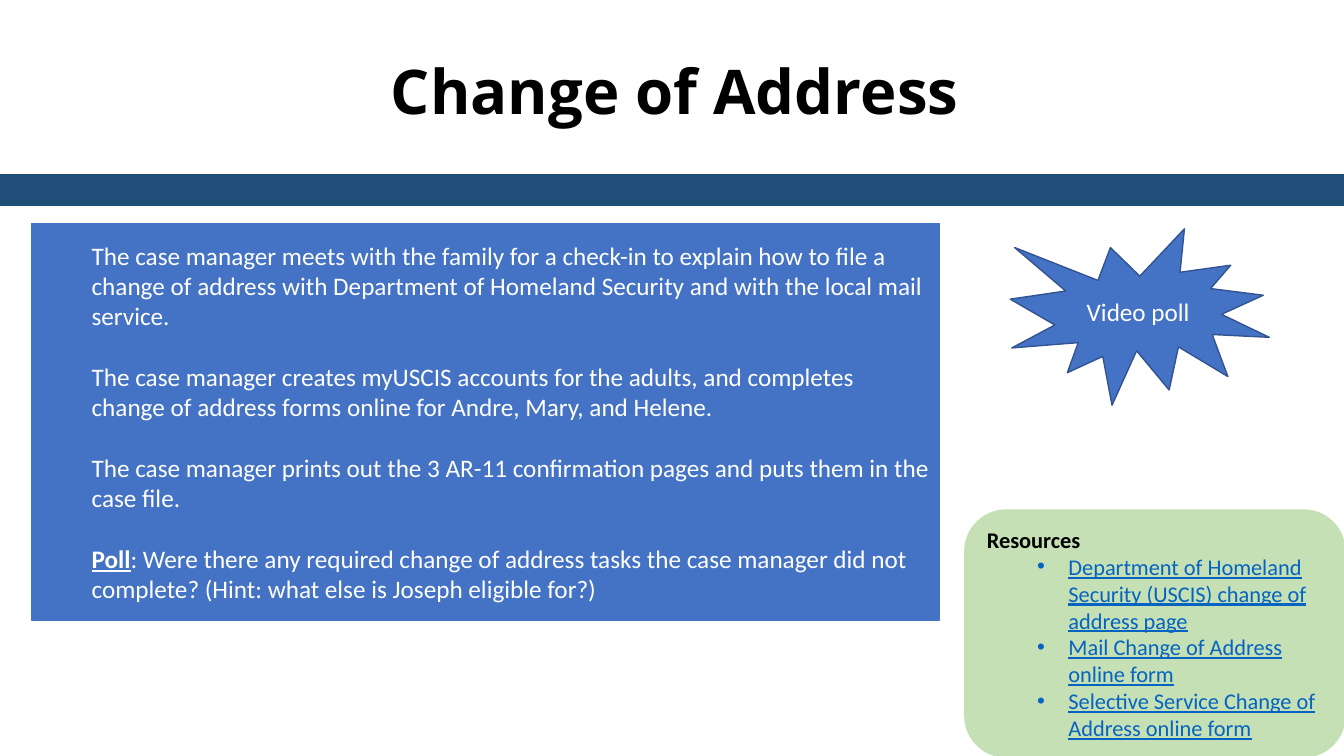
from lxml.etree import SubElement
from pptx import Presentation
from pptx.dml.color import RGBColor
from pptx.enum.shapes import MSO_SHAPE
from pptx.enum.text import MSO_ANCHOR, MSO_AUTO_SIZE, PP_ALIGN
from pptx.oxml.ns import qn
from pptx.util import Inches, Pt

BLACK = RGBColor(0x00, 0x00, 0x00)
WHITE = RGBColor(0xFF, 0xFF, 0xFF)
NAVY = RGBColor(0x1F, 0x4E, 0x79)
BLUE = RGBColor(0x44, 0x72, 0xC4)
OUTLINE_BLUE = RGBColor(0x32, 0x54, 0x91)
GREEN = RGBColor(0xC5, 0xE0, 0xB4)
LINK_BLUE = RGBColor(0x05, 0x63, 0xC1)


def add_panel(slide, preset, bounds, fill, outline):
    shape = slide.shapes.add_shape(preset, *[Inches(length) for length in bounds])
    shape.shadow.inherit = False
    shape.fill.solid()
    shape.fill.fore_color.rgb = fill
    shape.line.color.rgb = outline
    shape.line.width = Pt(1)
    shape.text_frame.word_wrap = True
    shape.text_frame.vertical_anchor = MSO_ANCHOR.MIDDLE
    return shape


def add_run(paragraph, text, color, **formats):
    run = paragraph.add_run()
    run.text = text
    run.font.color.rgb = color
    for name, value in ({"name": "Calibri", "size": Pt(18)} | formats).items():
        setattr(run.font, name, value)


presentation = Presentation()
presentation.slide_width = Inches(13.33)
presentation.slide_height = Inches(7.5)
slide = presentation.slides.add_slide(presentation.slide_layouts[5])

title = slide.shapes.title
title_bounds = {"left": 0.58, "top": 0.47, "width": 12.23, "height": 0.84}
for name, value in title_bounds.items():
    setattr(title, name, Inches(value))
title.text_frame.auto_size = MSO_AUTO_SIZE.NONE
title.text_frame.vertical_anchor = MSO_ANCHOR.MIDDLE
title_paragraph = title.text_frame.paragraphs[0]
title_paragraph.alignment = PP_ALIGN.CENTER
add_run(title_paragraph, "Change of Address", BLACK, name="Open Sans", size=Pt(44), bold=True)

add_panel(slide, MSO_SHAPE.RECTANGLE, (0, 1.73, 13.33, 0.31), NAVY, NAVY)

resources = add_panel(
    slide, MSO_SHAPE.FLOWCHART_ALTERNATE_PROCESS, (9.57, 5.06, 3.77, 2.45), GREEN, GREEN
)
heading = resources.text_frame.paragraphs[0]
heading.alignment = PP_ALIGN.LEFT
add_run(heading, "Resources", BLACK, size=Pt(16), bold=True)
resource_links = [
    "Department of Homeland Security (USCIS) change of address page",
    "Mail Change of Address online form",
    "Selective Service Change of Address online form",
]
for link in resource_links:
    paragraph = resources.text_frame.add_paragraph()
    paragraph.alignment = PP_ALIGN.LEFT
    properties = paragraph._p.get_or_add_pPr()
    properties.set("marL", str(Inches(0.81)))
    properties.set("indent", str(Inches(-0.31)))
    SubElement(properties, qn("a:buFont"), typeface="Arial")
    SubElement(properties, qn("a:buChar"), char="•")
    add_run(paragraph, link, LINK_BLUE, size=Pt(16), underline=True)

scenario = add_panel(slide, MSO_SHAPE.RECTANGLE, (0.31, 2.22, 9.01, 3.93), BLUE, BLUE)
scenario_steps = [
    ("", "The case manager meets with the family for a check-in to explain how to file a "
         "change of address with Department of Homeland Security and with the local "
         "mail service."),
    ("", "The case manager creates myUSCIS accounts for the adults, and completes "
         "change of address forms online for Andre, Mary, and Helene."),
    ("", "The case manager prints out the 3 AR-11 confirmation pages and puts them in the case file."),
    ("Poll", ": Were there any required change of address tasks the case manager did not "
             "complete? (Hint: what else is Joseph eligible for?)"),
]
for index, (label, text) in enumerate(scenario_steps):
    frame = scenario.text_frame
    paragraph = frame.add_paragraph() if index else frame.paragraphs[0]
    paragraph.alignment = PP_ALIGN.LEFT
    paragraph.space_before = Pt(21.7 if index else 0)
    paragraph._p.get_or_add_pPr().set("marL", str(Inches(0.5)))
    if label:
        add_run(paragraph, label, WHITE, bold=True, underline=True)
    add_run(paragraph, text, WHITE)

burst = add_panel(slide, MSO_SHAPE.EXPLOSION1, (10.02, 2.27, 2.57, 1.75), BLUE, OUTLINE_BLUE)
burst_paragraph = burst.text_frame.paragraphs[0]
burst_paragraph.alignment = PP_ALIGN.CENTER
add_run(burst_paragraph, "Video poll", WHITE)

presentation.save("out.pptx")
